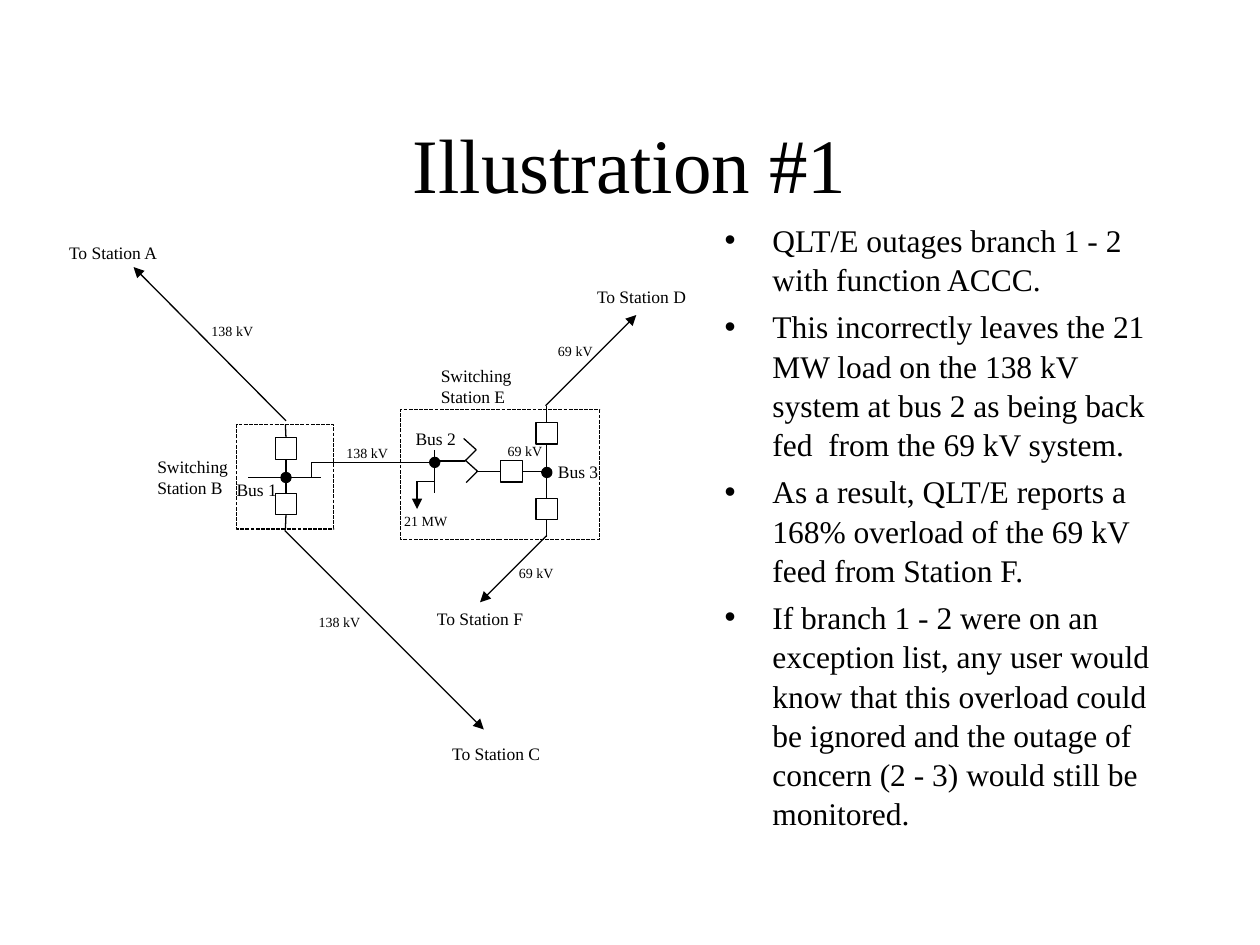
from lxml import etree
from pptx import Presentation
from pptx.dml.color import RGBColor
from pptx.enum.dml import MSO_LINE
from pptx.enum.shapes import MSO_CONNECTOR, MSO_SHAPE
from pptx.enum.text import MSO_ANCHOR, MSO_AUTO_SIZE, PP_ALIGN
from pptx.oxml.ns import qn
from pptx.util import Inches, Pt

FONT, INK = "Times New Roman", "000000"
TOP, LEFT, BOTTOM, RIGHT = range(4)
BREAKER_SIZE, NODE_SIZE = 0.17, 0.08

TITLE = "Illustration #1"
BULLETS = [
    "QLT/E outages branch 1 - 2 with function ACCC.",
    "This incorrectly leaves the 21 MW load on the 138 kV system at bus 2 "
    "as being back fed  from the 69 kV system.",
    "As a result, QLT/E reports a 168% overload of the 69 kV feed from Station F.",
    "If branch 1 - 2 were on an exception list, any user would know that this "
    "overload could be ignored and the outage of concern (2 - 3) would still be monitored.",
]

# Centres of breakers and bus nodes; left, top, width, height of stations
BREAKERS = {
    "B upper": (2.27, 3.56), "B lower": (2.27, 4.00),
    "E upper": (4.34, 3.44), "E side": (4.06, 3.74), "E lower": (4.34, 4.04),
}
NODES = {"Bus 1": (2.27, 3.79), "Bus 2": (3.45, 3.67), "Bus 3": (4.34, 3.75)}
STATIONS = {"Station B": (1.88, 3.37, 0.77, 0.83), "Station E": (3.18, 3.25, 1.58, 1.03)}

# Each wire is a chain of points; a name with a side joins that outline
WIRES = [
    [(1.97, 3.79), (2.55, 3.79)],
    [("Station B", TOP), ("B upper", TOP)],
    [("B upper", BOTTOM), (2.27, 3.79), ("B lower", TOP)],
    [("B lower", BOTTOM), ("Station B", BOTTOM)],
    [(2.47, 3.79), (2.47, 3.67), (3.45, 3.67)],
    [(3.45, 3.57), (3.45, 3.91)],
    [(3.45, 3.66), (3.69, 3.66), (3.78, 3.57), (3.68, 3.48)],
    [(3.70, 3.83), (3.79, 3.74), (3.69, 3.65)],
    [(3.78, 3.74), ("E side", LEFT)],
    [("E side", RIGHT), (4.34, 3.74)],
    [(4.34, 3.22), ("E upper", TOP)],
    [("E upper", BOTTOM), ("E lower", TOP)],
    [("E lower", BOTTOM), (4.34, 4.26)],
    [(3.45, 3.82), (3.31, 3.82)],
]
ARROWS = [
    [(3.31, 3.82), (3.31, 4.04)],
    [(2.27, 3.34), (1.06, 2.12)],
    [(2.26, 4.21), (3.84, 5.79)],
    [(4.33, 3.22), (5.05, 2.50)],
    [(4.34, 4.25), (3.81, 4.78)],
]

# Font size -> text, left, top, width
LABELS = {
    10: [
        ("Switching Station B", 1.15, 3.57, 0.97),
        ("Switching Station E", 3.40, 2.85, 0.97),
        ("Bus 1", 1.78, 3.75, 0.53),
        ("Bus 2", 3.20, 3.35, 0.56),
        ("Bus 3", 4.33, 3.61, 0.57),
        ("To Station A", 0.45, 1.87, 1.37),
        ("To Station C", 3.49, 5.85, 0.93),
        ("To Station F", 3.37, 4.78, 0.97),
        ("To Station D", 4.64, 2.22, 1.04),
    ],
    8: [
        ("138 kV", 2.65, 3.48, 0.69),
        ("138 kV", 1.58, 2.51, 0.69),
        ("138 kV", 2.43, 4.82, 0.69),
        ("69 kV", 3.93, 3.46, 0.49),
        ("69 kV", 4.33, 2.67, 0.49),
        ("69 kV", 4.02, 4.43, 0.49),
        ("21 MW", 3.11, 4.02, 0.57),
    ],
}


def color(value):
    return RGBColor.from_string(value)


def set_font(paragraph, size):
    paragraph.font.name = FONT
    paragraph.font.size = Pt(size)
    paragraph.font.color.rgb = color(INK)


def place(shape, *box):
    shape.left, shape.top, shape.width, shape.height = map(Inches, box)


def square(center, size):
    """Return the box of a square around its centre."""
    return center[0] - size / 2, center[1] - size / 2, size, size


def add_outline(slide, kind, box, filled=False):
    shape = slide.shapes.add_shape(kind, *map(Inches, box))
    shape.shadow.inherit = False
    if filled:
        shape.fill.solid()
        shape.fill.fore_color.rgb = color(INK)
    else:
        shape.fill.background()
    shape.line.color.rgb = color(INK)
    shape.line.width = Pt(0.75)
    return shape


def add_wire(slide, start, end, outlines, arrow=False):
    """Draw one line, joined to an outline where an end names one."""
    connector = slide.shapes.add_connector(MSO_CONNECTOR.STRAIGHT, 0, 0, 0, 0)
    if start[0] in outlines:
        connector.begin_connect(outlines[start[0]], start[1])
    else:
        connector.begin_x, connector.begin_y = map(Inches, start)
    if end[0] in outlines:
        connector.end_connect(outlines[end[0]], end[1])
    else:
        connector.end_x, connector.end_y = map(Inches, end)
    connector.line.color.rgb = color(INK)
    connector.line.width = Pt(0.75)
    if arrow:
        etree.SubElement(connector.line._get_or_add_ln(), qn("a:tailEnd"), type="triangle")
    etree.SubElement(connector._element.spPr, qn("a:effectLst"))


def add_label(slide, size, text, left, top, width):
    height = size * 0.016 * (2 if text.startswith("Switching") else 1) + 0.11
    frame = slide.shapes.add_textbox(*map(Inches, (left, top, width, height))).text_frame
    frame.word_wrap = True
    frame.text = text
    set_font(frame.paragraphs[0], size)


def fill_placeholders(slide):
    title, body = slide.shapes.title, slide.placeholders[1]
    place(title, 0.75, 0.67, 8.5, 1.25)
    title.text_frame.text = TITLE
    title.text_frame.vertical_anchor = MSO_ANCHOR.MIDDLE
    title.text_frame.paragraphs[0].alignment = PP_ALIGN.CENTER
    set_font(title.text_frame.paragraphs[0], 44)

    place(body, 5.65, 1.69, 3.6, 5.04)
    body.text_frame.text = "\n".join(BULLETS)
    body.text_frame.auto_size = MSO_AUTO_SIZE.NONE
    for index, paragraph in enumerate(body.text_frame.paragraphs):
        properties = paragraph._p.get_or_add_pPr()
        properties.set("marL", str(Inches(0.38)))
        properties.set("indent", str(-Inches(0.38)))
        etree.SubElement(properties, qn("a:buChar"), char="•")
        paragraph.line_spacing = 1.04
        paragraph.space_before = Pt(4.5 if index else 0)
        set_font(paragraph, 18)


def main():
    presentation = Presentation()
    presentation.slide_width, presentation.slide_height = Inches(10), Inches(7.5)
    slide = presentation.slides.add_slide(presentation.slide_layouts[1])
    fill_placeholders(slide)

    outlines = {}
    for name, box in STATIONS.items():
        outlines[name] = add_outline(slide, MSO_SHAPE.RECTANGLE, box)
        outlines[name].line.dash_style = MSO_LINE.SQUARE_DOT
    for name, center in BREAKERS.items():
        outlines[name] = add_outline(slide, MSO_SHAPE.RECTANGLE, square(center, BREAKER_SIZE))
    for center in NODES.values():
        add_outline(slide, MSO_SHAPE.OVAL, square(center, NODE_SIZE), filled=True)

    for chains, arrow in ((WIRES, False), (ARROWS, True)):
        for chain in chains:
            for start, end in zip(chain, chain[1:]):
                add_wire(slide, start, end, outlines, arrow)
    for size, labels in LABELS.items():
        for label in labels:
            add_label(slide, size, *label)
    presentation.save("out.pptx")


if __name__ == "__main__":
    main()
